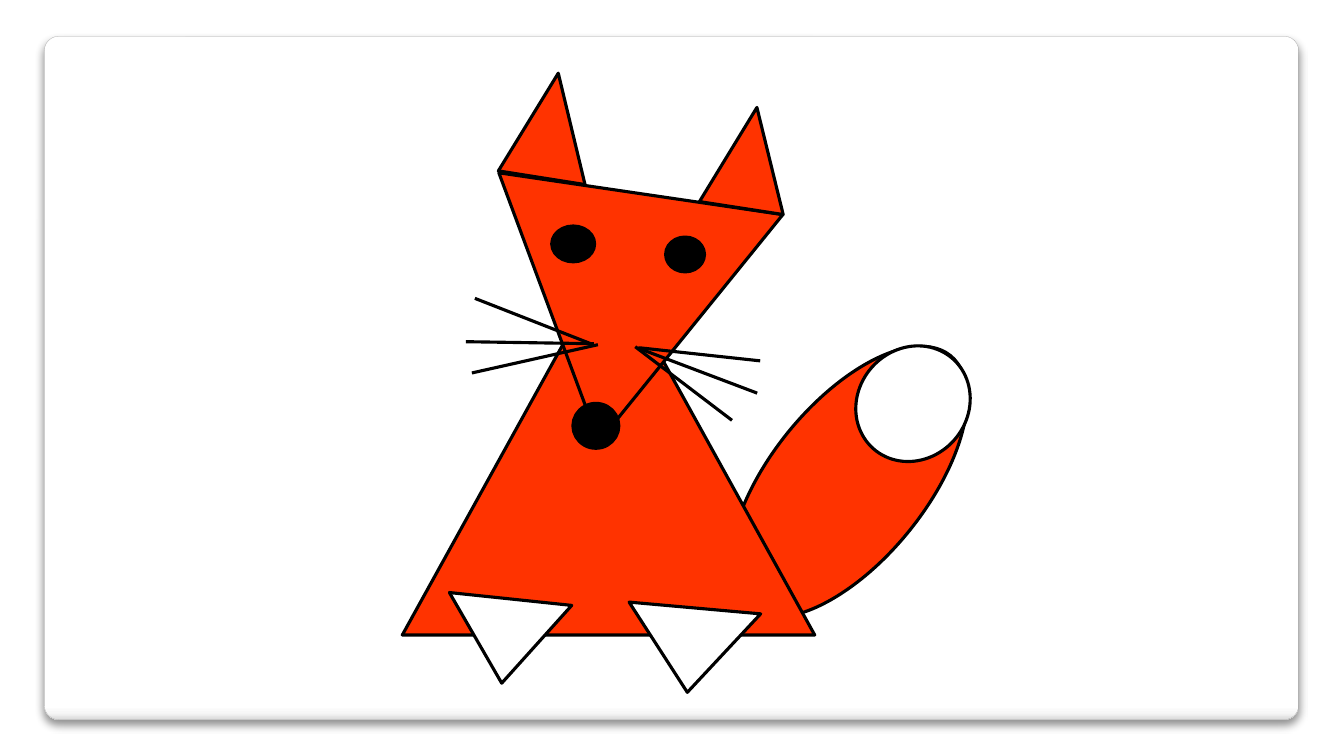
from lxml.etree import SubElement
from pptx import Presentation
from pptx.dml.color import RGBColor
from pptx.enum.shapes import MSO_CONNECTOR, MSO_SHAPE
from pptx.oxml.ns import qn
from pptx.util import Inches, Pt

THEME = {
    "fur": "FF3300",
    "white": "FFFFFF",
    "black": "000000",
    "card_line": "A4A4A4",
    "card_stops": [(0, "FFFFFF"), (98, "FFFFFF"), (99, "F7F7F7"), (100, "DADADA")],
    "outline": 2.25,
    "heavy": 3.35,
    "hairline": 0.16,
}
OVAL = MSO_SHAPE.OVAL
TRIANGLE = MSO_SHAPE.ISOSCELES_TRIANGLE
MERGE = MSO_SHAPE.FLOWCHART_MERGE

prs = Presentation()
prs.slide_width, prs.slide_height = Inches(13.33), Inches(7.5)
s = prs.slides.add_slide(prs.slide_layouts[6])


def add_part(kind, box, rotation=0, fill="fur", line="black", width="outline"):
    sp = s.shapes.add_shape(kind, *map(Inches, box))
    sp.rotation = rotation
    sp.shadow.inherit = False
    sp.fill.solid()
    sp.fill.fore_color.rgb = RGBColor.from_string(THEME[fill])
    sp.line.color.rgb = RGBColor.from_string(THEME[line])
    sp.line.width = Pt(THEME[width])
    return sp


card = add_part(MSO_SHAPE.ROUNDED_RECTANGLE, (0.44, 0.36, 12.44, 6.78),
                fill="white", line="card_line", width="hairline")
card.adjustments[0] = 0.021
card.fill.gradient()
card.fill.gradient_angle = 270
stops = card._element.spPr.find(".//" + qn("a:gsLst"))
stops.clear()
for position, color in THEME["card_stops"]:
    stop = SubElement(stops, qn("a:gs"), pos=str(position * 1000))
    SubElement(stop, qn("a:srgbClr"), val=color)
effects = card._element.spPr.find(qn("a:effectLst"))
shadow = SubElement(effects, qn("a:outerShdw"), blurRad=str(Pt(6)), dist=str(Pt(4)),
                    dir="5400000", algn="ctr", rotWithShape="0")
shade = SubElement(shadow, qn("a:srgbClr"), val=THEME["black"])
SubElement(shade, qn("a:alpha"), val="44000")

tail = add_part(OVAL, (7.64, 3.17, 1.55, 3.22), 38.9)
body = add_part(TRIANGLE, (3.99, 2.6, 4.09, 3.7))
head = add_part(TRIANGLE, (4.45, 1.26, 2.9, 2.45), 309)
left_ear = add_part(TRIANGLE, (5.02, 0.72, 0.87, 1.05), 9)
right_ear = add_part(MERGE, (7.01, 1.06, 0.84, 1.01), 188.8)

left_paw = add_part(TRIANGLE, (4.41, 5.94, 1.22, 0.84), 186, fill="white")
right_paw = add_part(MERGE, (6.2, 6.03, 1.31, 0.84), 5.1, fill="white")
tail_tip = add_part(OVAL, (8.51, 3.41, 1.09, 1.19), 41.4, fill="white")

nose = (5.69, 4.01, 0.44, 0.43)
left_eye = (5.48, 2.25, 0.41, 0.34)
right_eye = (6.61, 2.36, 0.37, 0.33)
for box in (nose, left_eye, right_eye):
    add_part(OVAL, box, fill="black", width="heavy")

whiskers = [
    (6.34, 3.45, 7.54, 3.58),
    (6.3, 3.44, 7.26, 4.17),
    (6.32, 3.45, 7.51, 3.9),
    (5.86, 3.41, 4.71, 2.96),
    (5.89, 3.41, 4.62, 3.39),
    (5.93, 3.42, 4.68, 3.7),
]
for ends in whiskers:
    whisker = s.shapes.add_connector(MSO_CONNECTOR.STRAIGHT, *map(Inches, ends))
    whisker.line.color.rgb = RGBColor.from_string(THEME["black"])
    whisker.line.width = Pt(THEME["outline"])
    SubElement(whisker._element.spPr, qn("a:effectLst"))

prs.save("out.pptx")
